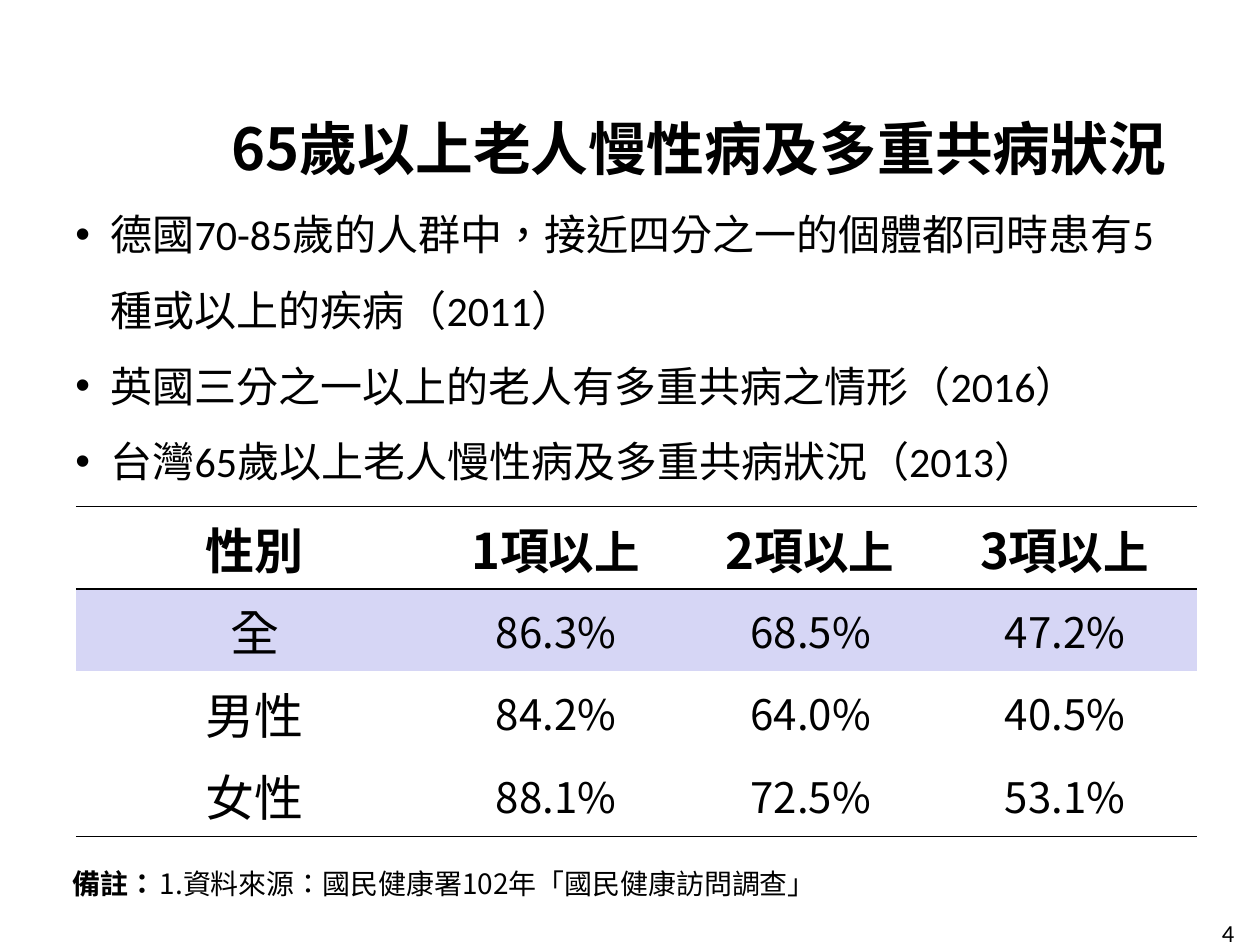
from lxml import etree
from pptx import Presentation
from pptx.dml.color import RGBColor
from pptx.enum.text import MSO_ANCHOR, PP_ALIGN
from pptx.oxml.ns import qn
from pptx.util import Cm, Pt

CENTER, RIGHT = PP_ALIGN.CENTER, PP_ALIGN.RIGHT
MIDDLE = MSO_ANCHOR.MIDDLE
CJK, LATIN = "Noto Sans CJK SC", "Calibri"
BLACK, BAND = "000000", "D6D6F5"

TITLE = "65歲以上老人慢性病及多重共病狀況"
POINTS = [
    "德國70-85歲的人群中，接近四分之一的個體都同時患有5種或以上的疾病（2011）",
    "英國三分之一以上的老人有多重共病之情形（2016）",
    "台灣65歲以上老人慢性病及多重共病狀況（2013）",
]
NOTE = [("備註：", 16, True), (" ", 8, True),
        ("1.資料來源：國民健康署102年「國民健康訪問調查」", 16, False)]
ROWS = [
    ["性別", "1項", "2項", "3項"],
    ["全", "86.3% ", "68.5% ", "47.2% "],
    ["男性", "84.2% ", "64.0% ", "40.5% "],
    ["女性", "88.1% ", "72.5% ", "53.1% "],
]


def rgb(value):
    return RGBColor.from_string(value)


def add_run(p, text, size, bold=False, font=CJK):
    r = p.add_run()
    r.text = text
    r.font.size, r.font.bold, r.font.name = Pt(size), bold, font
    r.font.color.rgb = rgb(BLACK)
    r_pr = r.font._element
    r_pr.set("lang", "zh-TW")
    etree.SubElement(r_pr, qn("a:ea"), typeface=CJK)


def add_text_frame(s, box, anchor=MSO_ANCHOR.TOP):
    tf = s.shapes.add_textbox(*map(Cm, box)).text_frame
    tf.word_wrap = True
    tf.vertical_anchor = anchor
    return tf


def hang(p, indent, bullet=None):
    """Give the paragraph a hanging indent in cm and, if wanted, a bullet."""
    p_pr = p._p.get_or_add_pPr()
    p_pr.set("marL", str(Cm(indent)))
    p_pr.set("indent", str(-Cm(indent)))
    if bullet:
        etree.SubElement(p_pr, qn("a:buFont"), typeface="Arial")
        etree.SubElement(p_pr, qn("a:buChar"), char=bullet)


def add_title(s, box):
    p = add_text_frame(s, box, MIDDLE).paragraphs[0]
    p.alignment, p.line_spacing = CENTER, 1.5
    add_run(p, TITLE, 33, True)


def add_points(s, box):
    tf = add_text_frame(s, box)
    for i, text in enumerate(POINTS):
        p = tf.add_paragraph() if i else tf.paragraphs[0]
        hang(p, 0.71, "•")
        p.line_spacing = 1.5
        add_run(p, text, 24, font=LATIN)


def set_borders(cell, top, bottom):
    tc_pr = cell._tc.get_or_add_tcPr()
    for side, shown in (("L", False), ("R", False), ("T", top), ("B", bottom)):
        ln = etree.SubElement(tc_pr, qn(f"a:ln{side}"), w=str(Pt(1)))
        if shown:
            fill = etree.SubElement(ln, qn("a:solidFill"))
            etree.SubElement(fill, qn("a:srgbClr"), val=BLACK)
        else:
            etree.SubElement(ln, qn("a:noFill"))


def fill_cell(cell, banded):
    if not banded:
        cell.fill.background()
        return
    cell.fill.solid()
    cell.fill.fore_color.rgb = rgb(BAND)
    color = cell._tc.tcPr.find(".//" + qn("a:srgbClr"))
    etree.SubElement(color, qn("a:alpha"), val="50000")


def add_rates_table(s, box):
    left, top, width, height = box
    table = s.shapes.add_table(len(ROWS), len(ROWS[0]), *map(Cm, box)).table
    table.first_row = table.horz_banding = False
    first = 7.21
    for c, column in enumerate(table.columns):
        column.width = Cm((width - first) / 3 if c else first)
    for r, texts in enumerate(ROWS):
        table.rows[r].height = Cm(height / len(ROWS))
        for c, text in enumerate(texts):
            cell = table.cell(r, c)
            cell.vertical_anchor = MIDDLE
            set_borders(cell, r in (0, 1), r in (0, len(ROWS) - 1))
            fill_cell(cell, r == 1)
            p = cell.text_frame.paragraphs[0]
            p.alignment = CENTER
            add_run(p, text, 24 if r and c else 28, r == 0)
            if r == 0 and c:
                add_run(p, "以上 ", 26, True)


def add_note(s, box):
    p = add_text_frame(s, box).paragraphs[0]
    hang(p, 0.99)
    for text, size, bold in NOTE:
        add_run(p, text, size, bold)


def add_page_number(s, box):
    p = add_text_frame(s, box).paragraphs[0]
    p.alignment = RIGHT
    add_run(p, "4", 14, font=LATIN)


def main():
    prs = Presentation()
    prs.slide_width, prs.slide_height = Cm(25.4), Cm(19.05)
    s = prs.slides.add_slide(prs.slide_layouts[6])
    add_title(s, (2.24, 1.37, 23.7, 2.51))
    add_points(s, (1.27, 3.58, 22.86, 6.1))
    add_rates_table(s, (1.53, 10.21, 22.6, 6.65))
    add_note(s, (1.22, 17.35, 24.18, 1.09))
    add_page_number(s, (23.83, 18.39, 1.3, 1.32))
    prs.save("out.pptx")


if __name__ == "__main__":
    main()
